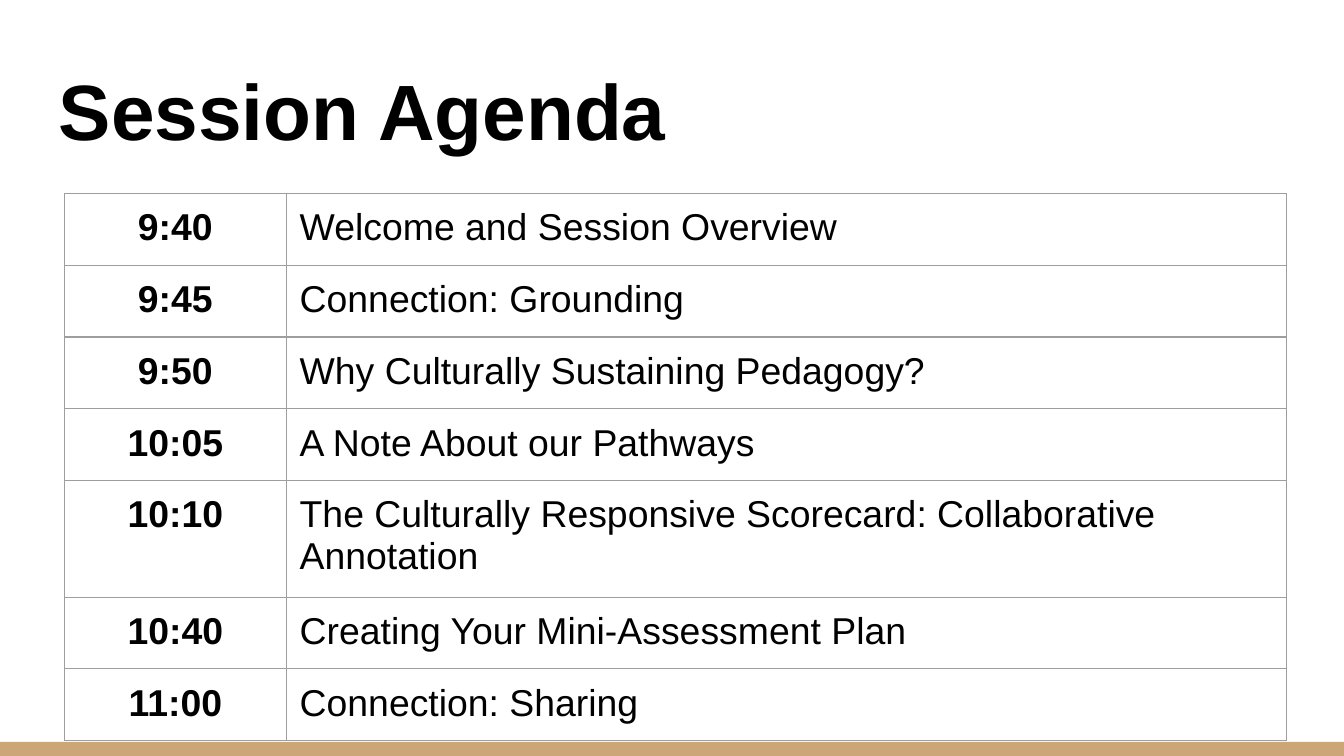
from pptx import Presentation
from pptx.dml.color import RGBColor
from pptx.enum.shapes import MSO_SHAPE
from pptx.enum.text import MSO_ANCHOR, PP_ALIGN
from pptx.oxml.ns import qn
from pptx.util import Inches, Pt
from lxml import etree

RECTANGLE = MSO_SHAPE.RECTANGLE
BOTTOM, TOP = MSO_ANCHOR.BOTTOM, MSO_ANCHOR.TOP
LEFT, CENTER = PP_ALIGN.LEFT, PP_ALIGN.CENTER

# Content
TITLE = "Session Agenda"
AGENDA = [
    ("9:40", "Welcome and Session Overview"),
    ("9:45", "Connection: Grounding"),
    ("9:50", "Why Culturally Sustaining Pedagogy?"),
    ("10:05", "A Note About our Pathways"),
    ("10:10", "The Culturally Responsive Scorecard: Collaborative Annotation"),
    ("10:40", "Creating Your Mini-Assessment Plan"),
    ("11:00", "Connection: Sharing"),
]

# Style
COLORS = {"background": "FFFFFF", "text": "000000", "band": "CCA677", "border": "9E9E9E"}
FONT = "Arial"
MARGIN = Inches(0.1)
COLUMN_WIDTHS = (1.65, 7.44)
ROW_HEIGHT = 0.42  # minimum; rows grow to fit their text
TABLE_HEIGHT = 3.73


def color(name):
    return RGBColor.from_string(COLORS[name])


def style_text(paragraph, size, bold, alignment=LEFT):
    paragraph.alignment = alignment
    for span in paragraph.runs:
        span.font.name = FONT
        span.font.size = Pt(size)
        span.font.bold = bold
        span.font.color.rgb = color("text")


def set_margins(target):
    target.margin_left = target.margin_right = MARGIN
    target.margin_top = target.margin_bottom = MARGIN


def add_borders(cell):
    properties = cell._tc.get_or_add_tcPr()
    for index, side in enumerate(("a:lnL", "a:lnR", "a:lnT", "a:lnB")):
        line = etree.Element(qn(side), w=str(Pt(0.75)))
        fill = etree.SubElement(line, qn("a:solidFill"))
        etree.SubElement(fill, qn("a:srgbClr"), val=COLORS["border"])
        properties.insert(index, line)


# Widescreen page, 16:9
deck = Presentation()
deck.slide_width = Inches(10)
deck.slide_height = deck.slide_width * 9 // 16
page = deck.slides.add_slide(deck.slide_layouts[6])
page.background.fill.solid()
page.background.fill.fore_color.rgb = color("background")

# Bottom band
band_top = Inches(5.52)
band = page.shapes.add_shape(
    RECTANGLE, 0, band_top, deck.slide_width, deck.slide_height - band_top)
band.shadow.inherit = False
band.fill.solid()
band.fill.fore_color.rgb = color("band")
band.line.fill.background()

# Title
box = page.shapes.add_textbox(Inches(0.34), Inches(0.35), Inches(9.32), Inches(0.91))
frame = box.text_frame
frame.word_wrap = True
frame.vertical_anchor = BOTTOM
set_margins(frame)
frame.text = TITLE
style_text(frame.paragraphs[0], 42, True)

# Agenda table
table_frame = page.shapes.add_table(
    len(AGENDA), len(COLUMN_WIDTHS), Inches(0.48), Inches(1.44),
    Inches(sum(COLUMN_WIDTHS)), Inches(TABLE_HEIGHT))
table = table_frame.table
table.first_row = table.horz_banding = False
for column, width in zip(table.columns, COLUMN_WIDTHS):
    column.width = Inches(width)

for row, entry in enumerate(AGENDA):
    table.rows[row].height = Inches(ROW_HEIGHT)
    for column, text in enumerate(entry):
        cell = table.cell(row, column)
        is_time = column == 0
        cell.text_frame.text = text
        style_text(cell.text_frame.paragraphs[0], 20, is_time, CENTER if is_time else LEFT)
        set_margins(cell)
        cell.vertical_anchor = TOP
        cell.fill.background()
        add_borders(cell)

# Row heights reset the frame, so its height comes last
table_frame.height = Inches(TABLE_HEIGHT)

deck.save("out.pptx")
